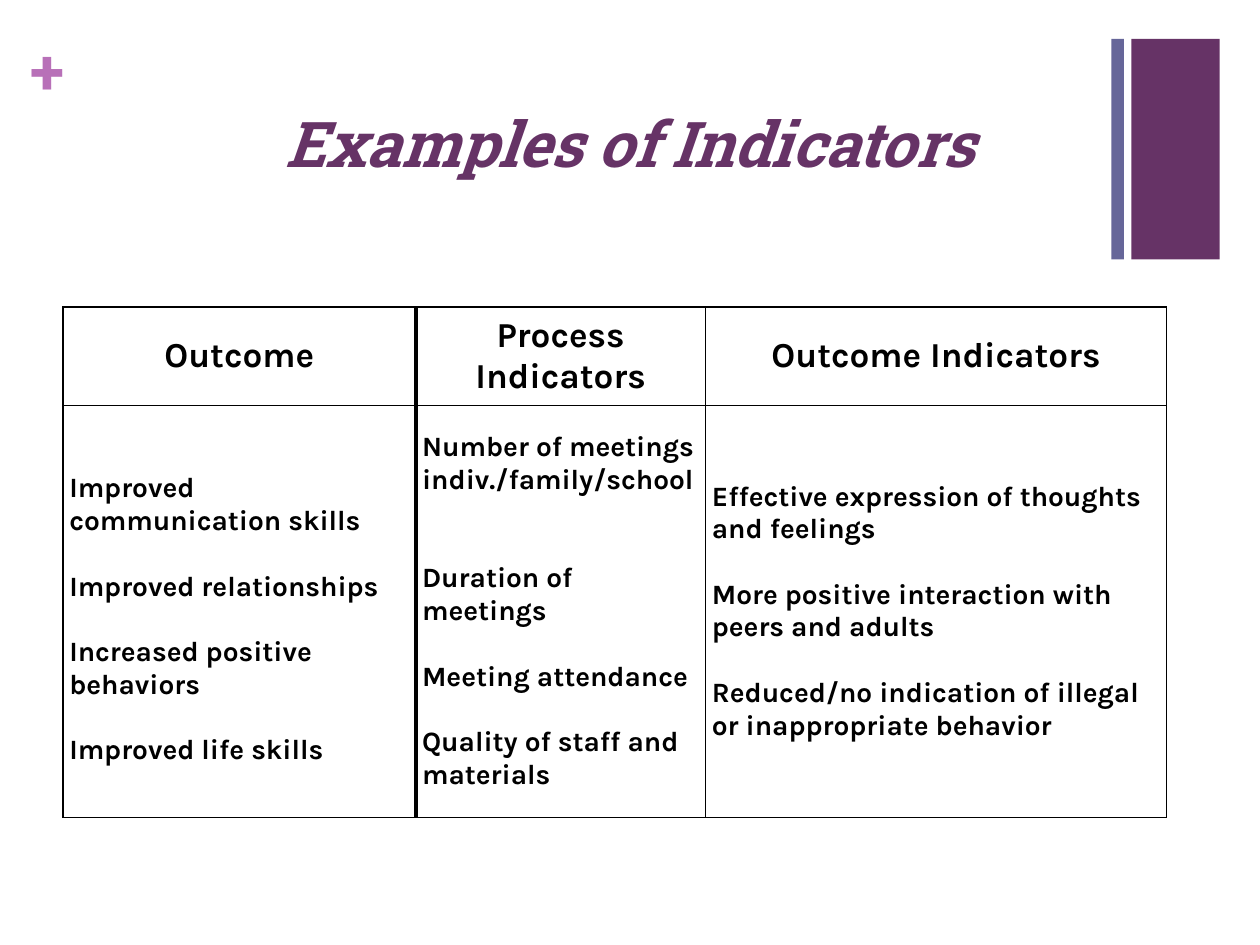
from lxml.etree import SubElement as Sub
from pptx import Presentation as Deck
from pptx.dml.color import RGBColor as RGB
from pptx.enum.shapes import MSO_SHAPE as Kind
from pptx.enum.text import MSO_ANCHOR as Anchor, PP_ALIGN as Align
from pptx.oxml.ns import qn
from pptx.util import Inches, Pt

PLUM = RGB(0x66, 0x33, 0x66)
SLATE = RGB(0x66, 0x66, 0x99)
ORCHID = RGB(0xB8, 0x70, 0xB8)
BLACK = RGB(0, 0, 0)

HEADS = ["Outcome", "Process Indicators", "Outcome Indicators"]
LISTS = [
    ["Improved communication skills", "Improved relationships",
     "Increased positive behaviors", "Improved life skills"],
    ["Number of meetings indiv./family/school", "Duration of meetings",
     "Meeting attendance", "Quality of staff and materials"],
    ["Effective expression of thoughts and feelings",
     "More positive interaction with peers and adults",
     "Reduced/no indication of illegal or inappropriate behavior"],
]


class Page:
    """Draws styled elements on one slide, with lengths in percent of its size."""

    HEAD = {"name": "Roboto Slab", "size": Pt(36), "bold": True}
    BODY = {"name": "Karla", "size": Pt(16), "bold": True}
    GAP = 18.7

    def __init__(self, deck):
        self.wide, self.high = deck.slide_width, deck.slide_height
        self.slide = deck.slides.add_slide(deck.slide_layouts[6])
        self.shapes = self.slide.shapes

    def col(self, share):
        return round(self.wide * share / 100)

    def row(self, share):
        return round(self.high * share / 100)

    def box(self, x, y, w, h):
        return self.col(x), self.row(y), self.col(w), self.row(h)

    def words(self, para, text, style, color, align):
        run = para.add_run()
        run.text = text
        para.alignment = align
        for key, value in style.items():
            setattr(run.font, key, value)
        run.font.color.rgb = color

    def bar(self, area, color):
        bar = self.shapes.add_shape(Kind.RECTANGLE, *self.box(*area))
        bar.shadow.inherit = False
        bar.fill.solid()
        bar.fill.fore_color.rgb = color
        bar.line.fill.background()

    def label(self, area, text, style, color, align, pad):
        frame = self.shapes.add_textbox(*self.box(*area)).text_frame
        form = {"word_wrap": True, "margin_left": pad, "margin_right": pad,
                "margin_top": pad // 2, "margin_bottom": pad // 2}
        for key, value in form.items():
            setattr(frame, key, value)
        self.words(frame.paragraphs[0], text, style, color, align)

    def edge(self, cell, sides):
        props = cell._tc.get_or_add_tcPr()
        for side, width in sides.items():
            line = Sub(props, qn(f"a:ln{side}"), w=str(Pt(width)))
            fill = Sub(line, qn("a:solidFill"))
            Sub(fill, qn("a:srgbClr"), val=str(BLACK))

    def cell(self, cell, lines, style, align, sides, top=0, gaps=None):
        form = {"margin_left": Inches(0.05), "margin_right": Inches(0.05),
                "margin_top": Inches(top), "margin_bottom": 0,
                "vertical_anchor": Anchor.MIDDLE}
        for key, value in form.items():
            setattr(cell, key, value)
        self.edge(cell, sides)
        cell.fill.background()
        frame = cell.text_frame
        for n, text in enumerate(lines):
            para = frame.add_paragraph() if n else frame.paragraphs[0]
            if n:
                para.space_before = Pt(self.GAP * (gaps or {}).get(n, 1))
            self.words(para, text, style, BLACK, align)

    def table(self, area, cols, rows, heads, lists):
        grid = self.shapes.add_table(2, len(cols), *self.box(*area)).table
        grid.first_row = grid.horz_banding = False
        for part, share in zip(grid.columns, cols):
            part.width = self.col(share)
        for part, share in zip(grid.rows, rows):
            part.height = self.row(share)
        large = {**self.BODY, "size": Pt(20)}
        for n, (head, lines) in enumerate(zip(heads, lists)):
            sides = {"L": 2.25 if n == 1 else 1, "R": 2.25 if n == 0 else 1,
                     "T": 1, "B": 1}
            self.cell(grid.cell(0, n), [head], large, Align.CENTER, sides)
            self.cell(grid.cell(1, n), lines, self.BODY, Align.LEFT, sides,
                      top=0.13 if n == 0 else 0, gaps={1: 2} if n == 1 else None)


def main():
    deck = Deck()
    deck.slide_width, deck.slide_height = Inches(10), Inches(7.5)
    page = Page(deck)
    page.bar((89.8, 4.13, 7, 23.33), PLUM)
    page.label((2.4, 3.33, 2.9, 8.13), "+", page.HEAD, ORCHID, Align.LEFT, 0)
    page.bar((88.2, 4.13, 1, 23.33), SLATE)
    page.label((5, 10.4, 90, 10), "Examples of Indicators",
               {**page.HEAD, "italic": True}, PLUM, Align.CENTER, Inches(0.1))
    page.table((5, 32.5, 87.6, 54), (28, 23, 36.6), (10.4, 43.6), HEADS, LISTS)
    deck.save("out.pptx")


if __name__ == "__main__":
    main()
